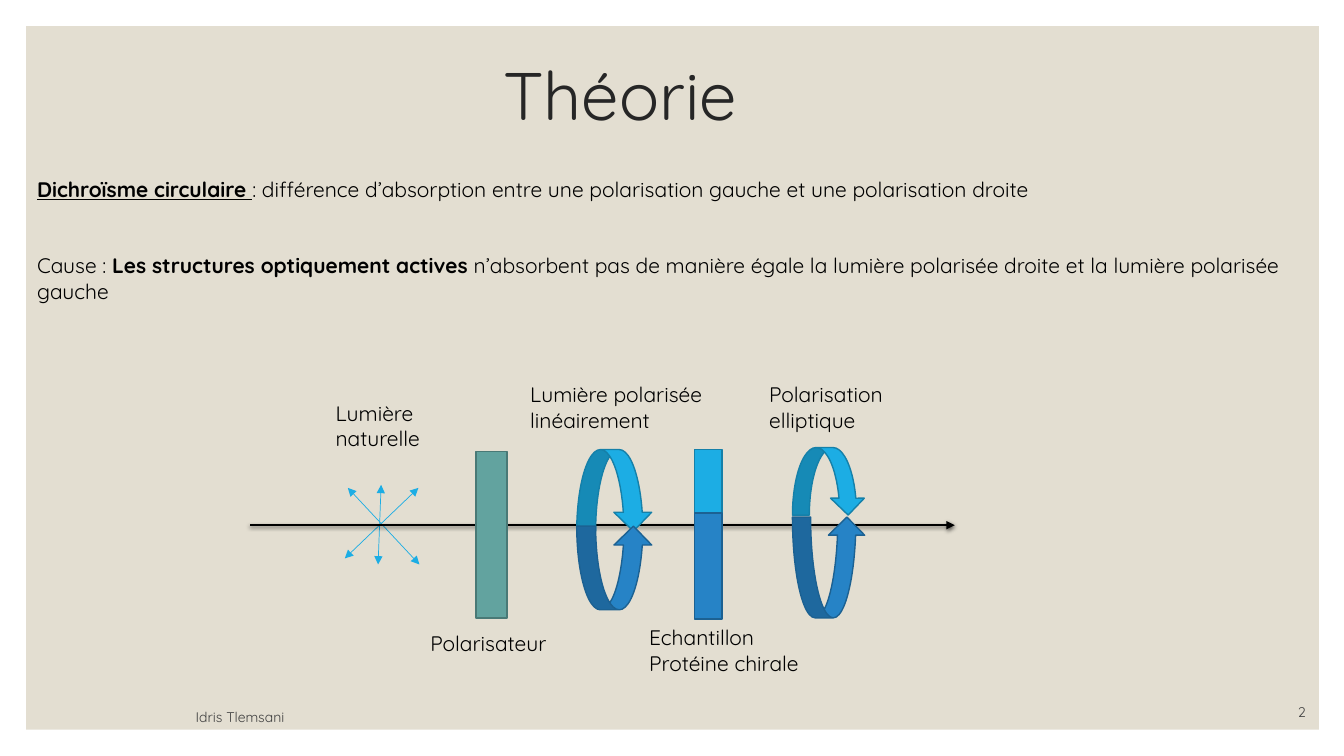
from pptx import Presentation
from pptx.dml.color import RGBColor
from pptx.enum.shapes import MSO_CONNECTOR as Link, MSO_SHAPE as Kind
from pptx.enum.text import MSO_ANCHOR as Anchor, PP_ALIGN as Align
from pptx.oxml.ns import qn
from pptx.util import Inches, Pt
from lxml.etree import SubElement as sub

FONT = "Quicksand"
BLACK, GREY, DARK = "000000", "404040", "262626"
SKY, BLUE, GREEN, SAND = "1CADE4", "2683C6", "62A39F", "E3DED1"
EDGES = {SKY: "1580A9", BLUE: "1C6192", GREEN: "497976"}
BOLD = {"bold": True}


def tint(code):
    return RGBColor.from_string(code)


def assign(item, values):
    for name, value in values.items():
        setattr(item, name, value)


def write(slide, box, paras, size=15, color=BLACK, anchor=Anchor.TOP, **form):
    """Add a text box; each paragraph is a list of (text, font values)."""
    frame = slide.shapes.add_textbox(*map(Inches, box)).text_frame
    assign(frame, {"word_wrap": True, "vertical_anchor": anchor})
    for i, runs in enumerate(paras):
        para = frame.add_paragraph() if i else frame.paragraphs[0]
        assign(para, form)
        for text, style in runs:
            run = para.add_run()
            run.text = text
            assign(run.font, {"name": FONT, "size": Pt(size), **style})
            run.font.color.rgb = tint(color)
    return frame


def draw(slide, kind, box, color):
    shape = slide.shapes.add_shape(kind, *map(Inches, box))
    shape.shadow.inherit = False
    shape.fill.solid()
    shape.fill.fore_color.rgb = tint(color)
    if color in EDGES:
        shape.line.color.rgb = tint(EDGES[color])
        shape.line.width = Pt(1)
    else:
        shape.line.fill.background()


def arrow(slide, ends, color, width, heads, shadow=False):
    link = slide.shapes.add_connector(Link.STRAIGHT, *map(Inches, ends))
    link.line.color.rgb = tint(color)
    link.line.width = Pt(width)
    props = link._element.spPr
    for head in heads:
        sub(props.find(qn("a:ln")), qn("a:" + head), type="triangle")
    effects = sub(props, qn("a:effectLst"))
    if shadow:
        outer = sub(effects, qn("a:outerShdw"), blurRad=str(Pt(3)),
                    dist=str(Pt(1)), dir="5400000", rotWithShape="0")
        shade = sub(outer, qn("a:srgbClr"), val=BLACK)
        sub(shade, qn("a:alpha"), val="63000")


def header(slide, box):
    write(slide, box, [[("Théorie", {})]], 48, DARK, Anchor.MIDDLE,
          alignment=Align.CENTER, line_spacing=0.9)


def body(slide, box):
    frame = write(slide, box, [
        [("Dichroïsme circulaire ", {**BOLD, "underline": True}),
         (": différence d’absorption entre une polarisation gauche "
          "et une polarisation droite", {})],
        [("Cause : ", {}), ("Les structures optiquement actives", BOLD),
         (" n’absorbent pas de manière égale la lumière polarisée droite "
          "et la lumière polarisée gauche", {})],
    ])
    frame.paragraphs[1].space_before = Pt(36.75)


def footer(slide, box):
    left, top, width, height = box
    write(slide, (left, top + 0.02, 4.22, height), [[("Idris Tlemsani", {})]],
          10, GREY, Anchor.BOTTOM, alignment=Align.CENTER)
    write(slide, (left + width - 1.6, top, 1.6, height - 0.03), [[("2", {})]],
          10, GREY, Anchor.BOTTOM, alignment=Align.RIGHT)


def rays(slide, x, y):
    """Draw the double arrows of natural light in the box from x, y."""
    for x1, y1, x2, y2 in ((0.36, 0, 0.33, 0.79), (0, 0.73, 0.73, 0.03),
                           (0.74, 0.79, 0.03, 0.03)):
        arrow(slide, (x + x1, y + y1, x + x2, y + y2), SKY, 0.5,
              ("headEnd", "tailEnd"))


def loop(slide, box, upper, start, lower):
    """Draw two curved arrows: upper is a height, start and lower the other's."""
    left, top, width = box
    draw(slide, Kind.CURVED_DOWN_ARROW, (left, top, width, upper), SKY)
    draw(slide, Kind.CURVED_UP_ARROW, (left, top + start, width, lower), BLUE)


def setup(slide, box):
    """Draw the light path through polariser and sample."""
    left, top, width, height = box
    rays(slide, left + 0.94, top + 1.07)
    axis = top + 1.47
    arrow(slide, (left, axis, left + width, axis), BLACK, 1.5, ("tailEnd",), True)
    loop(slide, (left + 3.24, top + 0.72, 0.75), 0.81, 0.76, 0.83)
    loop(slide, (left + 5.38, top + 0.7, 0.72), 0.67, 0.69, 1)
    for x, y, wide, high, color in ((2.24, 0.74, 0.31, 1.65, GREEN),
                                    (4.41, 0.72, 0.27, 0.63, SKY),
                                    (4.41, 1.35, 0.27, 1.05, BLUE)):
        draw(slide, Kind.RECTANGLE, (left + x, top + y, wide, high), color)
    for x, y, wide, *lines in (
            (0.75, 0.18, 1.5, "Lumière naturelle"),
            (1.69, 2.47, 1.6, "Polarisateur"),
            (2.68, 0, 2.09, "Lumière polarisée linéairement"),
            (5.05, 0, 1.79, "Polarisation elliptique"),
            (3.86, 2.41, 2.09, "Echantillon", "Protéine chirale")):
        write(slide, (left + x, top + y, wide, 0.61),
              [[(line, {})] for line in lines])


def main():
    deck = Presentation()
    assign(deck, {"slide_width": Inches(13.33), "slide_height": Inches(7.5)})
    slide = deck.slides.add_slide(deck.slide_layouts[6])
    draw(slide, Kind.RECTANGLE, (0.26, 0.26, 12.82, 6.98), SAND)
    header(slide, (0.4, 0.25, 11.5, 1.45))
    body(slide, (0.27, 1.7, 13.06, 1.6))
    footer(slide, (0.27, 6.9, 12.78, 0.33))
    setup(slide, (2.48, 3.74, 6.99, 3.02))
    deck.save("out.pptx")


if __name__ == "__main__":
    main()
